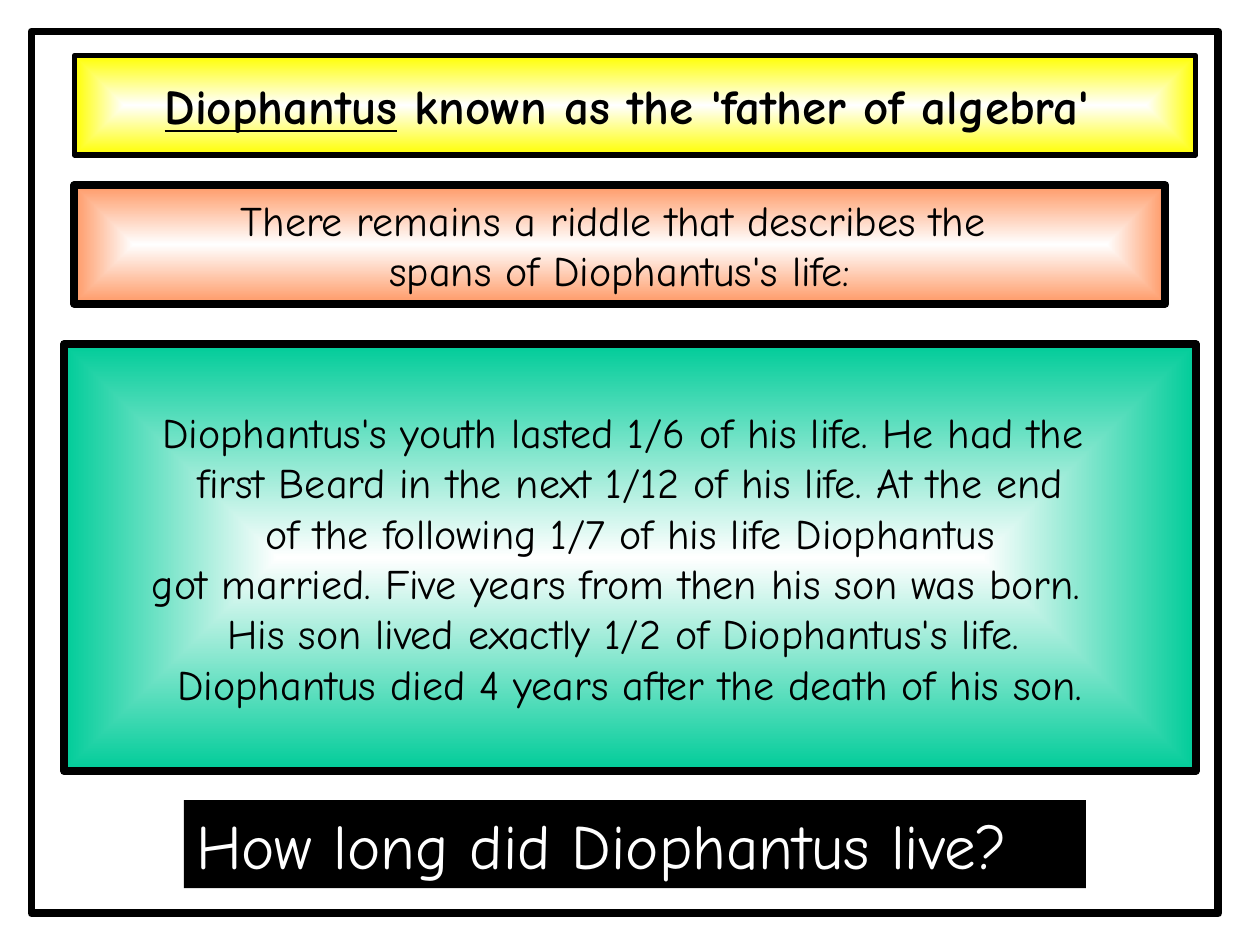
from dataclasses import dataclass

from lxml.etree import SubElement
from pptx import Presentation
from pptx.dml.color import RGBColor
from pptx.enum.shapes import MSO_SHAPE
from pptx.enum.text import MSO_ANCHOR, MSO_AUTO_SIZE, PP_ALIGN
from pptx.oxml.ns import qn
from pptx.shapes.base import BaseShape
from pptx.slide import Slide
from pptx.util import Inches, Pt

FONT = "Comic Neue"
BLACK, WHITE = "000000", "FFFFFF"


@dataclass
class Run:
    text: str
    size: float = 24
    font: str = FONT
    color: str = BLACK
    bold: bool = False
    underline: bool = False


@dataclass
class Panel:
    left: float
    top: float
    width: float
    height: float
    edge_color: str
    line_width: float
    paragraphs: list[list[Run]]


def rgb(color: str) -> RGBColor:
    return RGBColor.from_string(color)


def add_rectangle(slide: Slide, left: float, top: float, width: float, height: float) -> BaseShape:
    shape = slide.shapes.add_shape(
        MSO_SHAPE.RECTANGLE, Inches(left), Inches(top), Inches(width), Inches(height))
    shape.shadow.inherit = False
    return shape


def set_outline(shape: BaseShape, width: float) -> None:
    shape.line.color.rgb = rgb(BLACK)
    shape.line.width = Pt(width)


def set_glow_fill(shape: BaseShape, edge_color: str) -> None:
    """Fill with a gradient running from a white centre to the edges."""
    shape.fill.gradient()
    for stop, color, position in zip(shape.fill.gradient_stops, (WHITE, edge_color), (0, 1)):
        stop.color.rgb = rgb(color)
        stop.position = position
    gradient = shape._element.spPr.find(qn("a:gradFill"))
    gradient.remove(gradient.find(qn("a:lin")))
    path = SubElement(gradient, qn("a:path"), {"path": "shape"})
    SubElement(path, qn("a:fillToRect"), {side: "50000" for side in "ltrb"})


def write_text(shape: BaseShape, paragraphs: list[list[Run]], alignment: PP_ALIGN) -> None:
    frame = shape.text_frame
    for index, runs in enumerate(paragraphs):
        paragraph = frame.add_paragraph() if index else frame.paragraphs[0]
        paragraph.alignment = alignment
        for item in runs:
            run = paragraph.add_run()
            run.text = item.text
            run.font.size = Pt(item.size)
            run.font.name = item.font
            run.font.color.rgb = rgb(item.color)
            run.font.bold = item.bold
            run.font.underline = item.underline


def format_panel(shape: BaseShape, panel: Panel) -> None:
    set_glow_fill(shape, panel.edge_color)
    set_outline(shape, panel.line_width)
    frame = shape.text_frame
    frame.word_wrap = False
    frame.auto_size = MSO_AUTO_SIZE.NONE
    frame.vertical_anchor = MSO_ANCHOR.MIDDLE
    write_text(shape, panel.paragraphs, PP_ALIGN.CENTER)


TITLE = Panel(0.59, 0.44, 8.9, 0.79, "FFFF00", 3, [[
    Run("Diophantus", 28, bold=True, underline=True),
    Run(" known as the 'father of algebra' ", 28, bold=True),
]])

RIDDLE = Panel(0.51, 2.73, 8.98, 3.39, "00CC99", 4.5, [[Run(line)] for line in (
    "Diophantus's youth lasted 1/6 of his life. He had the ",
    "first Beard in the next 1/12 of his life. At the end",
    " of the following 1/7 of his life Diophantus ",
    "got married. Five years from then his son was born.  ",
    "His son lived exactly 1/2 of Diophantus's life. ",
    "Diophantus died 4 years after the death of his son.",
)])

INTRODUCTION = Panel(0.59, 1.47, 8.66, 0.94, "FF9966", 4.5, [[Run(line)] for line in (
    "There remains a riddle that describes the ",
    "spans of Diophantus's life:",
)])


def main() -> None:
    presentation = Presentation()
    presentation.slide_width, presentation.slide_height = Inches(10), Inches(7.5)
    slide = presentation.slides.add_slide(presentation.slide_layouts[5])

    # Title
    title = slide.shapes.title
    title.left, title.top = Inches(TITLE.left), Inches(TITLE.top)
    title.width, title.height = Inches(TITLE.width), Inches(TITLE.height)
    format_panel(title, TITLE)

    # Page frame
    page_frame = add_rectangle(slide, 0.25, 0.25, 9.42, 7)
    page_frame.fill.background()
    set_outline(page_frame, 4.5)

    # Riddle and its introduction
    for panel in (RIDDLE, INTRODUCTION):
        shape = add_rectangle(slide, panel.left, panel.top, panel.width, panel.height)
        format_panel(shape, panel)

    # Closing question
    question = add_rectangle(slide, 1.46, 6.35, 7.16, 0.7)
    question.fill.solid()
    question.fill.fore_color.rgb = rgb(BLACK)
    question.line.fill.background()
    question.text_frame.word_wrap = True
    question.text_frame.auto_size = MSO_AUTO_SIZE.SHAPE_TO_FIT_TEXT
    question.text_frame.vertical_anchor = MSO_ANCHOR.TOP
    write_text(question, [[
        Run("How long did Diophantus live?", 36, color=WHITE),
        Run(" ", font="Times New Roman"),
    ]], PP_ALIGN.LEFT)

    presentation.save("out.pptx")


if __name__ == "__main__":
    main()
